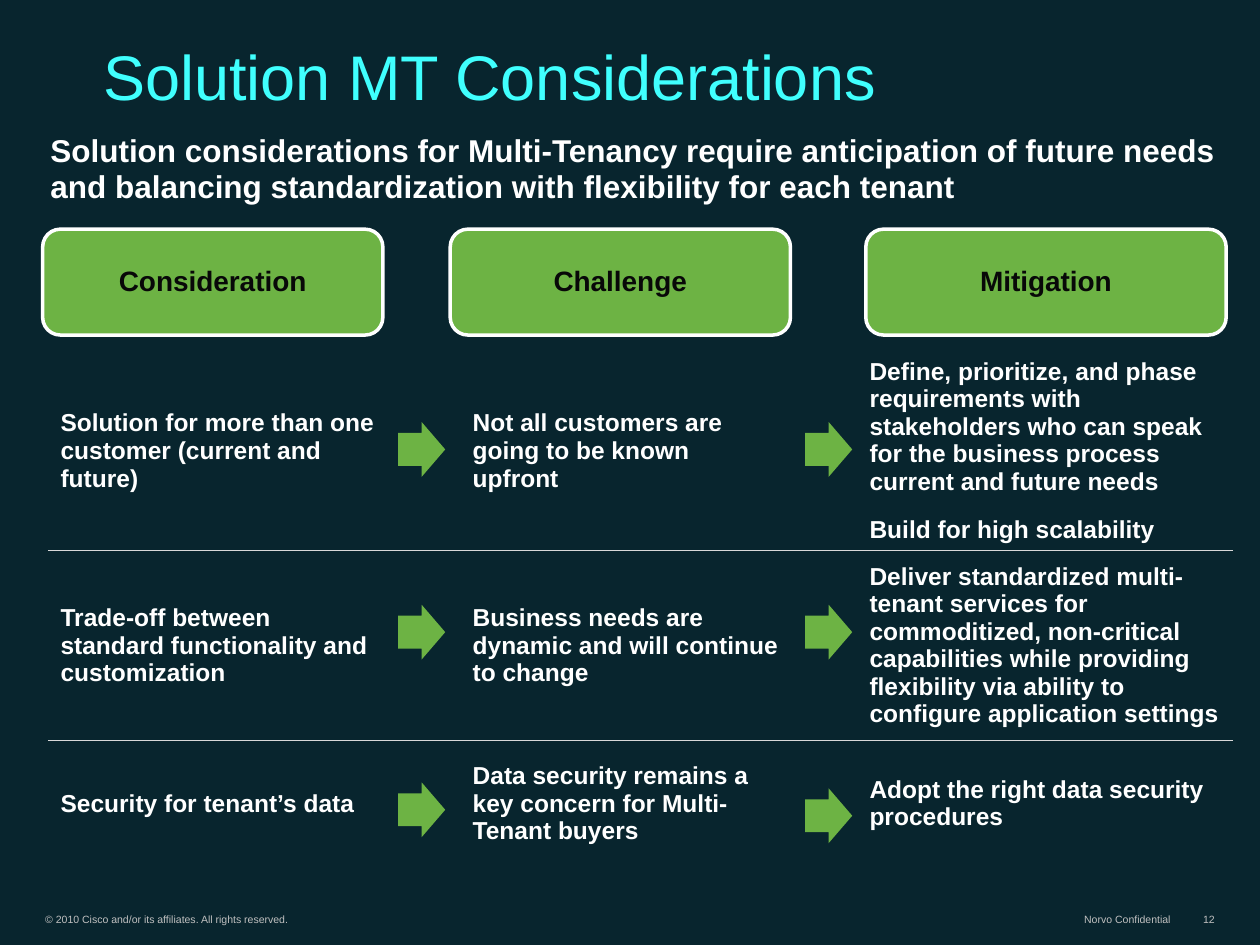
from lxml.etree import SubElement
from pptx import Presentation
from pptx.dml.color import RGBColor
from pptx.enum.shapes import MSO_SHAPE
from pptx.enum.text import MSO_ANCHOR, MSO_AUTO_SIZE, PP_ALIGN
from pptx.oxml import parse_xml
from pptx.oxml.ns import nsdecls, qn
from pptx.util import Pt

GREEN, WHITE, RULE = "6DB344", "FFFFFF", "D9D9D9"
NO_STYLE = "{2D5ABB26-0587-4C30-8999-92F81FD0307C}"


def rgb(value):
    return RGBColor.from_string(value)


def apply(target, values):
    for name, value in values.items():
        setattr(target, name, value)


class Deck:
    font = "Arial"

    def __init__(self, prs, background):
        self.s = prs.slides.add_slide(prs.slide_layouts[1])
        self.s.background.fill.solid()
        self.s.background.fill.fore_color.rgb = rgb(background)

    def frame(self, tf, margins, **values):
        sides = ("margin_left", "margin_top", "margin_right", "margin_bottom")
        apply(tf, dict(zip(sides, map(Pt, margins))))
        apply(tf, {"word_wrap": True, "auto_size": MSO_AUTO_SIZE.NONE, **values})

    def add_text(self, p, text, size, color, bold=False, **values):
        apply(p, values)
        r = p.add_run()
        r.text = text
        apply(r.font, {"name": self.font, "size": Pt(size), "bold": bold})
        r.font.color.rgb = rgb(color)

    def placeholder(self, index, box, text, size, color, anchor, spacing, bold=False):
        sp = self.s.placeholders[index]
        apply(sp, dict(zip(("left", "top", "width", "height"), map(Pt, box))))
        self.frame(sp.text_frame, (7.2, 3.6, 7.2, 3.6), vertical_anchor=anchor)
        p = sp.text_frame.paragraphs[0]
        pPr = p._p.get_or_add_pPr()
        for name in ("marL", "indent"):
            pPr.set(name, "0")
        SubElement(pPr, qn("a:buNone"))
        self.add_text(p, text, size, color, bold, alignment=PP_ALIGN.LEFT,
                      line_spacing=spacing, space_before=Pt(0))

    def shape(self, kind, box, line=None):
        sp = self.s.shapes.add_shape(kind, *map(Pt, box))
        sp.shadow.inherit = False
        sp.fill.solid()
        sp.fill.fore_color.rgb = rgb(GREEN)
        if line:
            sp.line.color.rgb = rgb(line)
            sp.line.width = Pt(2)
        else:
            sp.line.fill.background()
        return sp

    def header(self, box, text):
        sp = self.shape(MSO_SHAPE.ROUNDED_RECTANGLE, box, WHITE)
        self.frame(sp.text_frame, (5, 3, 5, 3), vertical_anchor=MSO_ANCHOR.MIDDLE)
        self.add_text(sp.text_frame.paragraphs[0], text, 16, "080808", True,
                      alignment=PP_ALIGN.CENTER, line_spacing=0.9)

    def arrow(self, left, top):
        sp = self.shape(MSO_SHAPE.RIGHT_ARROW, (left, top, 26.9, 31.3))
        sp.adjustments[0], sp.adjustments[1] = 0.6, 0.5

    def footer(self, box, text, align):
        tf = self.s.shapes.add_textbox(*map(Pt, box)).text_frame
        self.frame(tf, (6.5, 3, 6.5, 3), vertical_anchor=MSO_ANCHOR.BOTTOM,
                   word_wrap=align == PP_ALIGN.LEFT)
        self.add_text(tf.paragraphs[0], text, 6, "C0C0C0", alignment=align)

    def cell_rule(self, side):
        return parse_xml(
            f'<a:{side} {nsdecls("a")} w="{Pt(0.75)}"><a:solidFill>'
            f'<a:srgbClr val="{RULE}"/></a:solidFill></a:{side}>')

    def table(self, left, top, widths, heights, rows, spacings):
        graphic = self.s.shapes.add_table(len(heights), len(widths), Pt(left), Pt(top),
                                          Pt(sum(widths)), Pt(sum(heights)))
        table = graphic.table
        apply(table, {"first_row": False, "horz_banding": False})
        table._tbl.tblPr.find(qn("a:tableStyleId")).text = NO_STYLE
        for column, width in zip(table.columns, widths):
            column.width = Pt(width)
        for i, (texts, height) in enumerate(zip(rows, heights)):
            table.rows[i].height = Pt(height)
            for j, cell in enumerate(table.rows[i].cells):
                cell.fill.background()
                apply(cell, {"vertical_anchor": MSO_ANCHOR.MIDDLE,
                             "margin_left": Pt(7.2), "margin_right": Pt(0)})
                # Rules run only between rows
                sides = ["lnT"] * (i > 0) + ["lnB"] * (i < len(rows) - 1)
                for k, side in enumerate(sides):
                    cell._tc.tcPr.insert(k, self.cell_rule(side))
                # Text sits in every other column, arrows between
                if j % 2:
                    continue
                tf = cell.text_frame
                for n, text in enumerate(texts[j // 2].split("\n")):
                    p = tf.add_paragraph() if n else tf.paragraphs[0]
                    after = spacings[i] if j == len(widths) - 1 else 0
                    self.add_text(p, text, 14, WHITE, True, space_after=Pt(after))


def main():
    prs = Presentation()
    prs.slide_width, prs.slide_height = Pt(720), Pt(540)
    deck = Deck(prs, "08252E")

    # Title and lead statement
    deck.placeholder(0, (51.8, 23.8, 641.5, 43.9), "Solution MT Considerations",
                     36, "40FFFE", MSO_ANCHOR.BOTTOM, 0.8)
    deck.placeholder(1, (21.6, 72.7, 683.3, 52.6),
                     "Solution considerations for Multi-Tenancy require anticipation of "
                     "future needs and balancing standardization with flexibility for "
                     "each tenant", 18, WHITE, MSO_ANCHOR.TOP, 0.95, True)

    # Column headers
    for left, width, text in ((24.4, 194.4, "Consideration"),
                              (257.3, 194.4, "Challenge"),
                              (494.8, 205.9, "Mitigation")):
        deck.header((left, 131, width, 60.5), text)

    # Considerations table
    rows = (
        ("Solution for more than one customer (current and future)",
         "Not all customers are going to be known upfront",
         "Define, prioritize, and phase requirements with stakeholders who can speak "
         "for the business process current and future needs\n"
         "Build for high scalability"),
        ("Trade-off between standard functionality and customization",
         "Business needs are dynamic and will continue to change",
         "Deliver standardized multi-tenant services for commoditized, non-critical "
         "capabilities while providing flexibility via ability to configure "
         "application settings"),
        ("Security for tenant’s data",
         "Data security remains a key concern for Multi-Tenant buyers",
         "Adopt the right data security procedures"),
    )
    deck.table(27.4, 200.9, (189.4, 46.1, 183.6, 43.2, 214.8), (105.8, 108.7, 72),
               rows, (12, 6, 6))

    # Arrows between the columns
    for left, tops in ((227.5, (241.2, 345.6, 447.1)), (460.1, (241.2, 345.6, 450.5))):
        for top in tops:
            deck.arrow(left, top)

    # Footer
    deck.footer((19.4, 518.4, 269.3, 13.7),
                "© 2010 Cisco and/or its affiliates. All rights reserved.", PP_ALIGN.LEFT)
    deck.footer((611.3, 518.4, 64.1, 13.7), "Norvo Confidential", PP_ALIGN.RIGHT)
    deck.footer((680.4, 518.4, 20.2, 13.7), "12", PP_ALIGN.RIGHT)

    prs.save("out.pptx")


if __name__ == "__main__":
    main()
